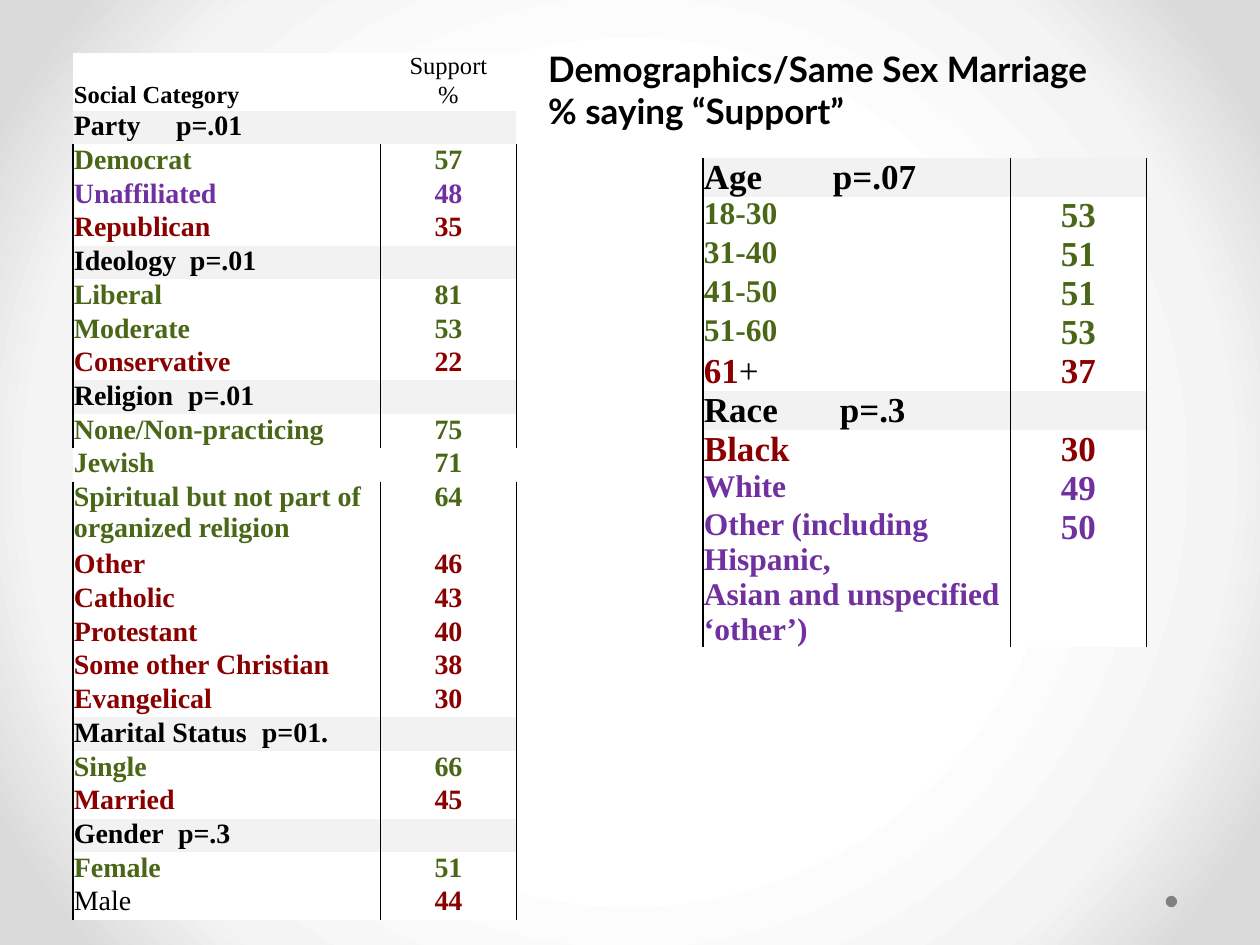
from dataclasses import dataclass

import lxml.etree
import pptx
import pptx.dml.color
import pptx.enum.shapes
import pptx.enum.text
import pptx.oxml
import pptx.oxml.ns
import pptx.util

Cm = pptx.util.Cm
qn = pptx.oxml.ns.qn
COLORS = {
    "black": "000000", "white": "FFFFFF", "band": "F2F2F2", "green": "4A6717",
    "purple": "7030A0", "red": "8A0000", "dot": "808080",
    "mist": "F4F4F4", "edge": "DADADA",
}
COLUMNS = (6.2, 2.74)


@dataclass
class Row:
    label: str
    value: str = ""
    tone: str = "black"
    size: int = 16
    value_size: int = 16
    height: float = 0.68
    fill: str = "white"
    ruled: bool = True
    bold: bool = True
    value_bold: bool = True
    value_tone: str = ""
    suffix: str = ""
    tab: float = 0


def group(name, p_value, tab, **options):
    return Row(f"{name}\t{p_value}", fill="band", tab=tab, **options)


def header(label, value):
    return Row(label, value, size=14, value_size=14, height=0.58,
               ruled=False, value_bold=False)


BIG = dict(size=20, value_size=20, height=0.78)
MID = dict(BIG, size=18)

SOCIAL = [
    header("", "Support"),
    header("Social Category", "%"),
    group("Party", "p=.01", 2.06, ruled=False),
    Row("Democrat", "57", "green"),
    Row("Unaffiliated", "48", "purple"),
    Row("Republican", "35", "red"),
    group("Ideology", "p=.01", 2.34),
    Row("Liberal", "81", "green"),
    Row("Moderate", "53", "green"),
    Row("Conservative", "22", "red"),
    group("Religion", "p=.01", 2.3),
    Row("None/Non-practicing", "75", "green"),
    Row("Jewish", "71", "green", ruled=False),
    Row("Spiritual but not part of\norganized religion", "64", "green", height=1.35),
    Row("Other", "46", "red"),
    Row("Catholic", "43", "red"),
    Row("Protestant", "40", "red"),
    Row("Some other Christian", "38", "red"),
    Row("Evangelical", "30", "red"),
    group("Marital Status", "p=01.", 3.79),
    Row("Single", "66", "green"),
    Row("Married", "45", "red"),
    group("Gender", "p=.3", 2.1),
    Row("Female", "51", "green"),
    Row("Male", "44", bold=False, value_tone="red"),
]
AGE_RACE = [
    group("Age", "p=.07", 2.6, **BIG),
    Row("18-30", "53", "green", **MID),
    Row("31-40", "51", "green", **MID),
    Row("41-50", "51", "green", **MID),
    Row("51-60", "53", "green", **MID),
    Row("61", "37", "red", suffix="+", **BIG),
    group("Race", "p=.3", 2.74, **BIG),
    Row("Black", "30", "red", **BIG),
    Row("White", "49", "purple", **MID),
    Row("Other (including Hispanic,\nAsian and unspecified ‘other’)", "50", "purple", **MID),
]


def rgb(name):
    return pptx.dml.color.RGBColor.from_string(COLORS[name])


def set_font(font, name, size, tone, bold):
    font.name = name
    font.size = pptx.util.Pt(size)
    font.color.rgb = rgb(tone)
    font.bold = bold


def set_borders(cell, ruled):
    tcPr = cell._tc.get_or_add_tcPr()
    for i, side in enumerate("LRTB"):
        ln = lxml.etree.Element(qn(f"a:ln{side}"), w="12700")
        if ruled and side in "LR":
            fill = lxml.etree.SubElement(ln, qn("a:solidFill"))
            lxml.etree.SubElement(fill, qn("a:srgbClr"), val=COLORS["black"])
        else:
            lxml.etree.SubElement(ln, qn("a:noFill"))
        tcPr.insert(i, ln)


def set_tab(p, position):
    tabs = lxml.etree.Element(qn("a:tabLst"))
    lxml.etree.SubElement(tabs, qn("a:tab"), pos=str(Cm(position)), algn="l")
    p._p.get_or_add_pPr().insert(0, tabs)


def fill_cell(cell, row, text, size, tone, bold, align):
    cell.margin_left = cell.margin_right = Cm(0.02)
    cell.margin_top = cell.margin_bottom = 0
    cell.fill.solid()
    cell.fill.fore_color.rgb = rgb(row.fill)
    set_borders(cell, row.ruled)
    tf = cell.text_frame
    tf.text = text
    for p in tf.paragraphs:
        p.alignment = align
        set_font(p.font, "Times New Roman", size, tone, bold)
        if not text:
            end = lxml.etree.SubElement(p._p, qn("a:endParaRPr"))
            end.set("sz", str(size * 100))


def add_support_table(s, left, top, rows):
    height = sum(row.height for row in rows)
    table = s.shapes.add_table(len(rows), 2, Cm(left), Cm(top),
                               Cm(sum(COLUMNS)), Cm(height)).table
    table.first_row = table.horz_banding = False
    for column, width in zip(table.columns, COLUMNS):
        column.width = Cm(width)
    align = pptx.enum.text.PP_ALIGN
    for i, row in enumerate(rows):
        table.rows[i].height = Cm(row.height)
        label, value = table.cell(i, 0), table.cell(i, 1)
        fill_cell(label, row, row.label, row.size, row.tone, row.bold, align.LEFT)
        fill_cell(value, row, row.value, row.value_size,
                  row.value_tone or row.tone, row.value_bold, align.CENTER)
        p = label.text_frame.paragraphs[0]
        if row.tab:
            set_tab(p, row.tab)
        if row.suffix:
            r = p.add_run()
            r.text = row.suffix
            set_font(r.font, "Times New Roman", row.size, "black", False)


def add_title(s, left, top, width, height):
    tf = s.shapes.add_textbox(Cm(left), Cm(top), Cm(width), Cm(height)).text_frame
    tf.word_wrap = False
    p = tf.paragraphs[0]
    p.text = "Demographics/Same Sex Marriage\v% saying “Support”"
    set_font(p.font, "Lato", 20, "black", True)


def add_dot(s, left, top, size):
    sp = s.shapes.add_shape(pptx.enum.shapes.MSO_SHAPE.OVAL,
                            Cm(left), Cm(top), Cm(size), Cm(size))
    sp.shadow.inherit = False
    sp.fill.solid()
    sp.fill.fore_color.rgb = rgb("dot")
    sp.line.fill.background()


def set_background(s):
    fill = s.background.fill
    fill.gradient()
    grad = s._element.cSld.find(".//" + qn("a:gradFill"))
    for child in list(grad):
        grad.remove(child)
    stops = lxml.etree.SubElement(grad, qn("a:gsLst"))
    for position, name in ((50, "white"), (76, "mist"), (92, "edge")):
        stop = lxml.etree.SubElement(stops, qn("a:gs"), pos=str(position * 1000))
        lxml.etree.SubElement(stop, qn("a:srgbClr"), val=COLORS[name])
    circle = lxml.etree.SubElement(grad, qn("a:path"), path="circle")
    lxml.etree.SubElement(circle, qn("a:fillToRect"), dict.fromkeys("ltrb", "50000"))


def main():
    prs = pptx.Presentation()
    prs.slide_width, prs.slide_height = Cm(25.4), Cm(19.05)
    s = prs.slides.add_slide(prs.slide_layouts[6])
    set_background(s)
    add_dot(s, 23.5, 18.06, 0.23)
    add_support_table(s, 1.47, 1.07, SOCIAL)
    add_support_table(s, 14.17, 3.18, AGE_RACE)
    add_title(s, 10.8, 0.84, 12.95, 1.96)
    prs.save("out.pptx")


if __name__ == "__main__":
    main()
